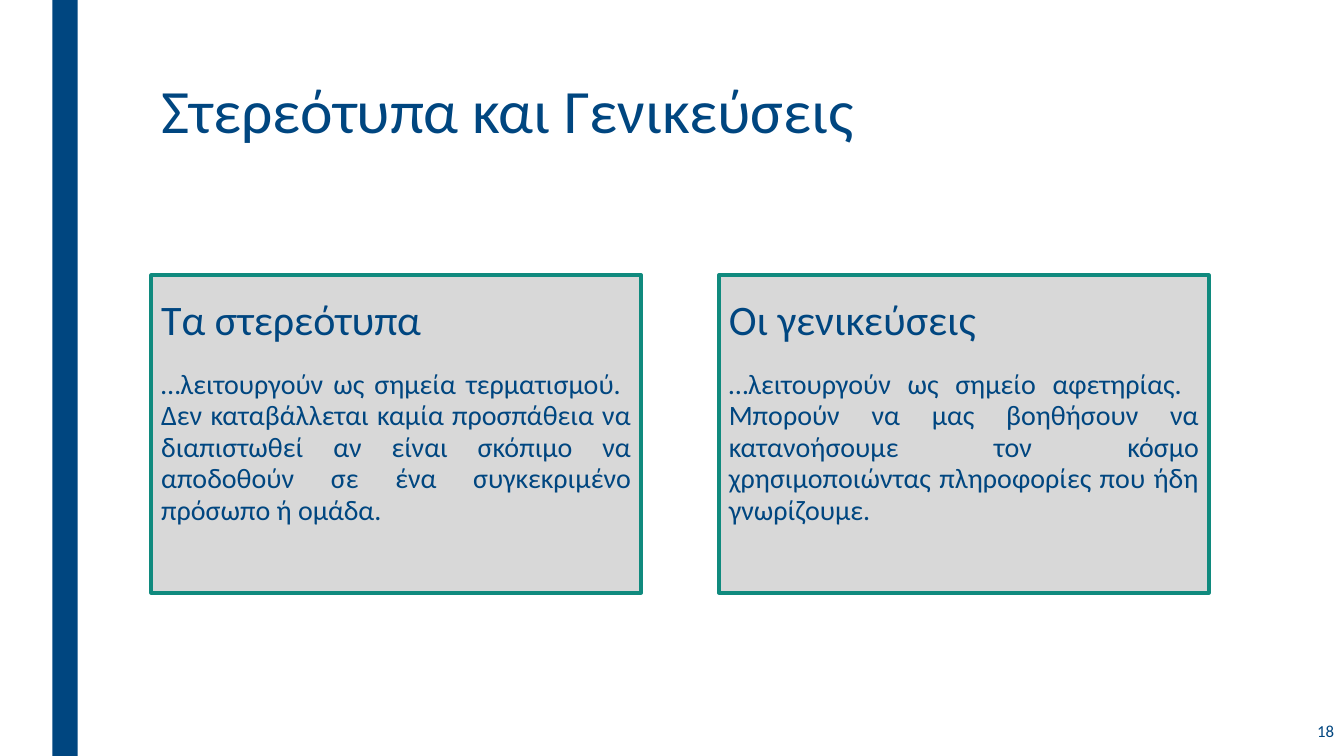
"""Build the slide comparing stereotypes with generalisations."""
from dataclasses import dataclass

from pptx import Presentation
from pptx.dml.color import RGBColor
from pptx.enum.shapes import MSO_SHAPE
from pptx.enum.text import MSO_ANCHOR, PP_ALIGN
from pptx.util import Inches, Pt

TITLE = "Στερεότυπα και Γενικεύσεις"
PAGE_NUMBER = "18"
CARDS = [
    ("Τα στερεότυπα", [
        "…λειτουργούν ως σημεία τερματισμού. ",
        "Δεν καταβάλλεται καμία προσπάθεια να διαπιστωθεί αν είναι σκόπιμο να "
        "αποδοθούν σε ένα συγκεκριμένο πρόσωπο ή ομάδα. ",
    ]),
    ("Οι γενικεύσεις", [
        "…λειτουργούν ως σημείο αφετηρίας. ",
        "Μπορούν να μας βοηθήσουν να κατανοήσουμε τον κόσμο χρησιμοποιώντας "
        "πληροφορίες που ήδη γνωρίζουμε.",
    ]),
]


@dataclass(frozen=True)
class Theme:
    """Colours, font and type sizes."""
    navy: RGBColor = RGBColor.from_string("004680")
    grey: RGBColor = RGBColor.from_string("D8D8D8")
    teal: RGBColor = RGBColor.from_string("108A7E")
    font: str = "Calibri"
    title: int = 44
    heading: int = 30
    body: int = 20
    number: int = 12
    border: float = 2.75


THEME = Theme()
SLIDE_WIDTH, SLIDE_HEIGHT = 13.33, 7.5
MARGIN = 1.5
CARD_WIDTH, CARD_GAP = 4.86, 0.77


def add_panel(slide, bounds, fill, border=None):
    """Add a flat rectangle, outlined if a border colour is given."""
    panel = slide.shapes.add_shape(MSO_SHAPE.RECTANGLE, *map(Inches, bounds))
    panel.shadow.inherit = False
    panel.fill.solid()
    panel.fill.fore_color.rgb = fill
    if border is None:
        panel.line.fill.background()
    else:
        panel.line.color.rgb = border
        panel.line.width = Pt(THEME.border)


def add_text(slide, bounds, lines, size, spacing=1.0,
             align=PP_ALIGN.LEFT, anchor=MSO_ANCHOR.TOP):
    """Add one paragraph whose lines are parted by line breaks."""
    frame = slide.shapes.add_textbox(*map(Inches, bounds)).text_frame
    frame.word_wrap = True
    frame.vertical_anchor = anchor
    paragraph = frame.paragraphs[0]
    paragraph.alignment = align
    paragraph.line_spacing = spacing
    for index, line in enumerate(lines):
        if index:
            paragraph.add_line_break()
        run = paragraph.add_run()
        run.text = line
        run.font.name = THEME.font
        run.font.size = Pt(size)
        run.font.color.rgb = THEME.navy


def main():
    """Lay out the slide and save it."""
    deck = Presentation()
    deck.slide_width, deck.slide_height = Inches(SLIDE_WIDTH), Inches(SLIDE_HEIGHT)
    slide = deck.slides.add_slide(deck.slide_layouts[6])

    add_panel(slide, (0.52, 0, 0.25, SLIDE_HEIGHT), THEME.navy)
    add_text(slide, (MARGIN, 0.75, 10.5, 0.8), [TITLE], THEME.title, 0.89)

    for column, (heading, body) in enumerate(CARDS):
        left = MARGIN + column * (CARD_WIDTH + CARD_GAP)
        add_panel(slide, (left, 2.73, CARD_WIDTH, 3.15), THEME.grey, THEME.teal)
        add_text(slide, (left, 2.56, CARD_WIDTH, 0.9), [heading],
                 THEME.heading, 0.84, anchor=MSO_ANCHOR.BOTTOM)
        add_text(slide, (left, 3.61, CARD_WIDTH, 2.8), body,
                 THEME.body, 0.94, align=PP_ALIGN.JUSTIFY)

    add_text(slide, (11.58, 7.03, 1.75, 0.44), [PAGE_NUMBER], THEME.number,
             align=PP_ALIGN.RIGHT, anchor=MSO_ANCHOR.MIDDLE)
    deck.save("out.pptx")


if __name__ == "__main__":
    main()
